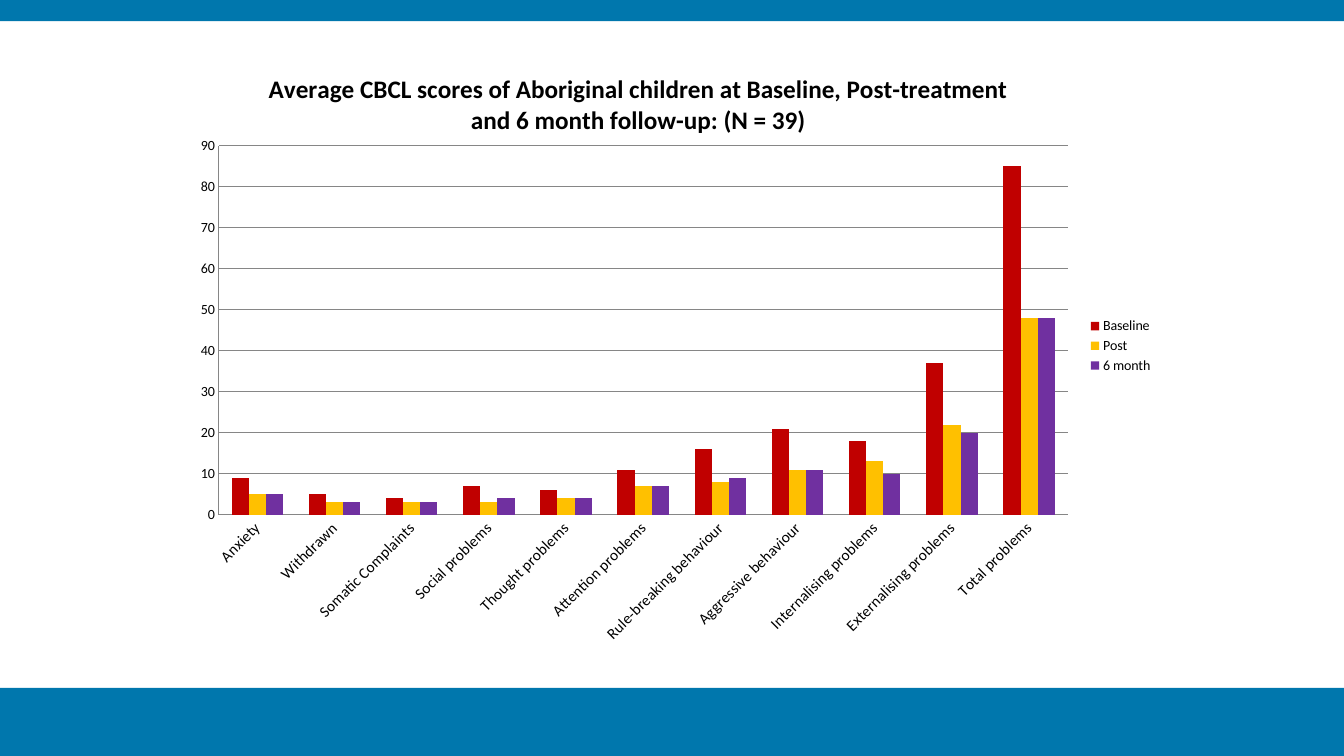
from typing import NamedTuple

from pptx import Presentation
from pptx.chart.data import CategoryChartData
from pptx.dml.color import RGBColor
from pptx.enum.chart import XL_CHART_TYPE as ChartType
from pptx.enum.chart import XL_LEGEND_POSITION as LegendPosition
from pptx.enum.chart import XL_TICK_MARK as TickMark
from pptx.oxml import parse_xml
from pptx.oxml.ns import nsdecls, qn
from pptx.util import Inches, Pt

FONT = "Calibri"
BLUE, BLACK, GREY = "0077AD", "000000", "868686"
TITLE = ("Average CBCL scores of Aboriginal children at Baseline, "
         "Post-treatment and 6 month follow-up: (N = 39)")
SCALES = ["Anxiety", "Withdrawn", "Somatic Complaints", "Social problems",
          "Thought problems", "Attention problems", "Rule-breaking behaviour",
          "Aggressive behaviour", "Internalising problems",
          "Externalising problems", "Total problems"]


class Area(NamedTuple):
    """A rectangle in shares of the slide or chart size."""
    left: float
    top: float
    width: float
    height: float


class Assessment(NamedTuple):
    name: str
    color: str
    scores: list[int]


BANDS = [Area(0, 0.91, 1, 0.09), Area(0, 0, 1, 0.028)]
CHART = Area(0.1335, 0.048, 0.732, 0.819)
PLOT = Area(0.04, 0.177, 0.863, 0.596)
TITLE_LEFT, TITLE_TOP = 0.086, 0.05
ASSESSMENTS = [
    Assessment("Baseline", "C00000", [9, 5, 4, 7, 6, 11, 16, 21, 18, 37, 85]),
    Assessment("Post", "FFC000", [5, 3, 3, 3, 4, 7, 8, 11, 13, 22, 48]),
    Assessment("6 month", "7030A0", [5, 3, 3, 4, 4, 7, 9, 11, 10, 20, 48]),
]


def paint(fill, color: str) -> None:
    fill.solid()
    fill.fore_color.rgb = RGBColor.from_string(color)


def set_font(font, size: float, bold: bool = False) -> None:
    font.name, font.size, font.bold = FONT, Pt(size), bold
    paint(font.fill, BLACK)


def set_line(line) -> None:
    paint(line.fill, GREY)
    line.width = Pt(0.75)


def on_slide(deck, area: Area) -> list[int]:
    width, height = deck.slide_width, deck.slide_height
    return [round(share * side)
            for share, side in zip(area, (width, height, width, height))]


def place(element, index: int, inner: bool = False, **shares: float) -> None:
    """Give a chart part a manual layout, in shares of the chart."""
    for layout in element.findall(qn("c:layout")):
        element.remove(layout)
    target = '<c:layoutTarget val="inner"/>' if inner else ""
    modes = "".join(f'<c:{key}Mode val="edge"/>' for key in ("x", "y"))
    values = "".join(f'<c:{key} val="{share}"/>' for key, share in shares.items())
    element.insert(index, parse_xml(
        f'<c:layout {nsdecls("c")}><c:manualLayout>{target}{modes}{values}'
        "</c:manualLayout></c:layout>"))


def add_band(deck, page, area: Area) -> None:
    band = page.shapes.add_shape(1, *on_slide(deck, area))
    band.shadow.inherit = False
    paint(band.fill, BLUE)
    band.line.fill.background()


def add_title(chart) -> None:
    title = chart.chart_title
    para = title.text_frame.paragraphs[0]
    para.text = TITLE
    set_font(para.font, 18, bold=True)
    place(title.element if hasattr(title, "element") else title._element, 1,
          x=TITLE_LEFT, y=TITLE_TOP)


def style_axes(chart) -> None:
    for axis, size in ((chart.category_axis, 11), (chart.value_axis, 10)):
        axis.major_tick_mark = axis.minor_tick_mark = TickMark.NONE
        set_font(axis.tick_labels.font, size)
        set_line(axis.format.line)
    scores = chart.value_axis
    scores.minimum_scale, scores.maximum_scale, scores.major_unit = 0, 90, 10
    set_line(scores.major_gridlines.format.line)
    for body in chart.element.xpath(".//c:catAx/c:txPr/a:bodyPr"):
        body.set("rot", "-2700000")


def add_score_chart(deck, page) -> None:
    data = CategoryChartData()
    data.categories = SCALES
    for assessment in ASSESSMENTS:
        data.add_series(assessment.name, assessment.scores)
    frame = page.shapes.add_chart(
        ChartType.COLUMN_CLUSTERED, *on_slide(deck, CHART), data)
    chart = frame.chart
    set_font(chart.font, 10)
    add_title(chart)
    style_axes(chart)
    place(chart.element.xpath(".//c:plotArea")[0], 0, inner=True,
          x=PLOT.left, y=PLOT.top, w=PLOT.width, h=PLOT.height)

    plot = chart.plots[0]
    plot.gap_width, plot.overlap, plot.vary_by_categories = 150, 0, False
    for series, assessment in zip(plot.series, ASSESSMENTS):
        paint(series.format.fill, assessment.color)

    chart.has_legend = True
    chart.legend.position = LegendPosition.RIGHT
    chart.legend.include_in_layout = False
    set_font(chart.legend.font, 10)


def main() -> None:
    deck = Presentation()
    deck.slide_width, deck.slide_height = Inches(13.33), Inches(7.5)
    page = deck.slides.add_slide(deck.slide_layouts[6])
    for band in BANDS:
        add_band(deck, page, band)
    add_score_chart(deck, page)
    deck.save("out.pptx")


if __name__ == "__main__":
    main()
